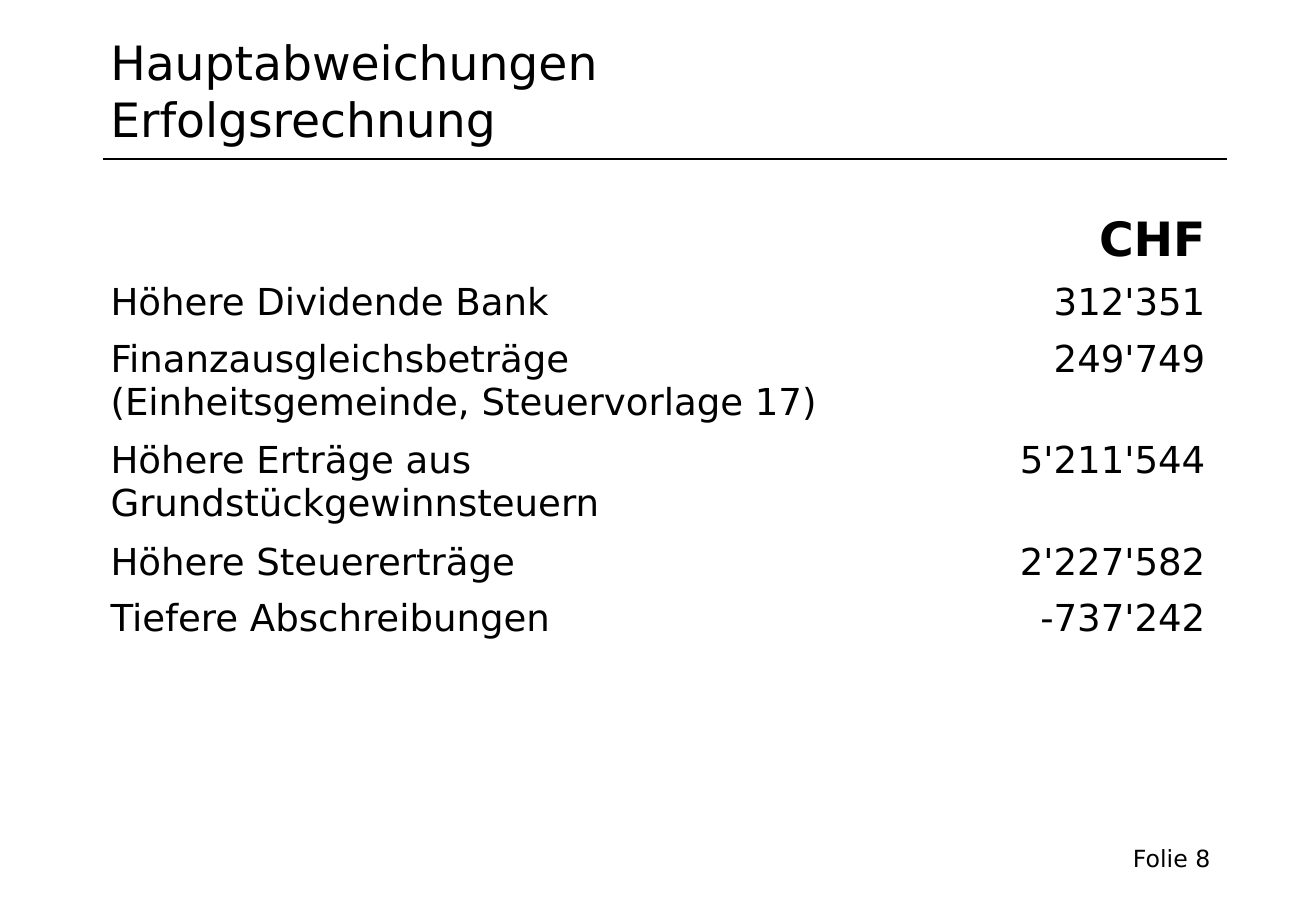
from dataclasses import dataclass

from lxml import etree
from pptx import Presentation
from pptx.dml.color import RGBColor
from pptx.enum.shapes import MSO_CONNECTOR
from pptx.enum.text import MSO_ANCHOR, PP_ALIGN
from pptx.oxml.ns import qn
from pptx.util import Inches, Pt

LEFT, RIGHT = PP_ALIGN.LEFT, PP_ALIGN.RIGHT
TOP, MIDDLE = MSO_ANCHOR.TOP, MSO_ANCHOR.MIDDLE
STRAIGHT = MSO_CONNECTOR.STRAIGHT


@dataclass(frozen=True)
class Theme:
    font: str = "DejaVu Sans"
    ink: RGBColor = RGBColor(0, 0, 0)
    title: int = 28
    body: int = 22
    footer: int = 14
    rule: float = 0.75


THEME = Theme()
SLIDE_W, SLIDE_H = 10.83, 7.5
MARGIN = 0.81
COLUMNS = (6.97, 2.24)
ROW_H = 0.41

DEVIATIONS = [
    ("Höhere Dividende Bank", "312'351"),
    ("Finanzausgleichsbeträge (Einheitsgemeinde, Steuervorlage 17)", "249'749"),
    ("Höhere Erträge aus Grundstückgewinnsteuern", "5'211'544"),
    ("Höhere Steuererträge", "2'227'582"),
    ("Tiefere Abschreibungen", "-737'242"),
]


def write(tf, text, size, align=LEFT, bold=False):
    p = tf.paragraphs[0]
    p.alignment = align
    r = p.add_run()
    r.text = text
    r.font.name = THEME.font
    r.font.size = Pt(size)
    r.font.bold = bold
    r.font.color.rgb = THEME.ink


def add_text(s, box, text, size, align=LEFT, anchor=TOP):
    sp = s.shapes.add_textbox(*(Inches(v) for v in box))
    tf = sp.text_frame
    tf.word_wrap = True
    tf.vertical_anchor = anchor
    write(tf, text, size, align)


def add_rule(s, x1, x2, y):
    line = s.shapes.add_connector(STRAIGHT, Inches(x1), Inches(y), Inches(x2), Inches(y))
    line.line.color.rgb = THEME.ink
    line.line.width = Pt(THEME.rule)
    etree.SubElement(line._element.spPr, qn("a:effectLst"))


def add_amounts(s, x, y, heading, entries):
    rows = [("", heading), *entries]
    frame = s.shapes.add_table(len(rows), len(COLUMNS), Inches(x), Inches(y),
                               Inches(sum(COLUMNS)), Inches(ROW_H * len(rows)))
    table = frame.table
    for column, width in zip(table.columns, COLUMNS):
        column.width = Inches(width)
    for i, row in enumerate(rows):
        is_heading = i == 0
        size = THEME.title if is_heading else THEME.body
        for j, text in enumerate(row):
            cell = table.cell(i, j)
            cell.fill.background()
            if text:
                write(cell.text_frame, text, size, RIGHT if j else LEFT, is_heading)


def main():
    prs = Presentation()
    prs.slide_width, prs.slide_height = Inches(SLIDE_W), Inches(SLIDE_H)
    s = prs.slides.add_slide(prs.slide_layouts[6])

    # Title above its rule
    add_rule(s, 0.85, 10.1, 1.31)
    add_text(s, (MARGIN, 0.24, 6.35, 1), "Hauptabweichungen Erfolgsrechnung",
             THEME.title, anchor=MIDDLE)

    # Deviations in CHF
    add_amounts(s, MARGIN, 1.7, "CHF", DEVIATIONS)

    # Slide number
    add_text(s, (9.04, 6.9, 1.02, 0.34), "Folie 8", THEME.footer, RIGHT)

    prs.save("out.pptx")


if __name__ == "__main__":
    main()
